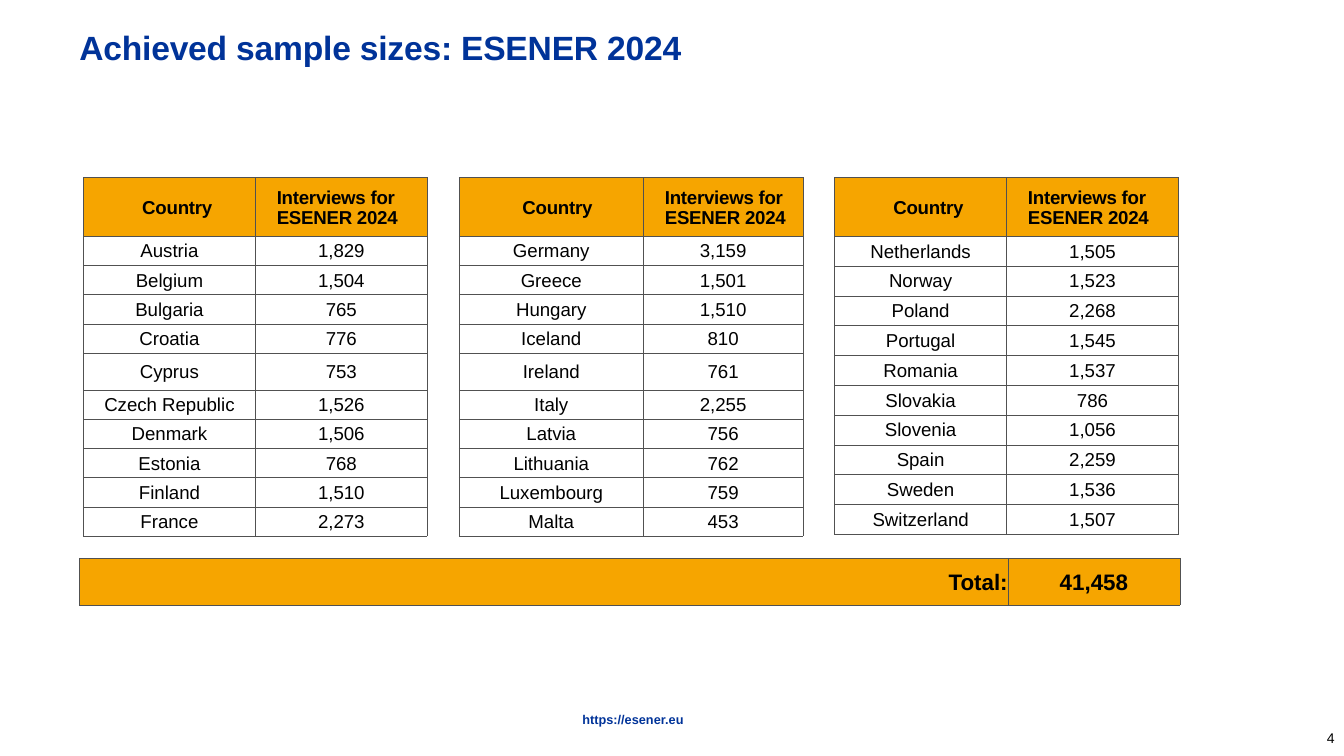
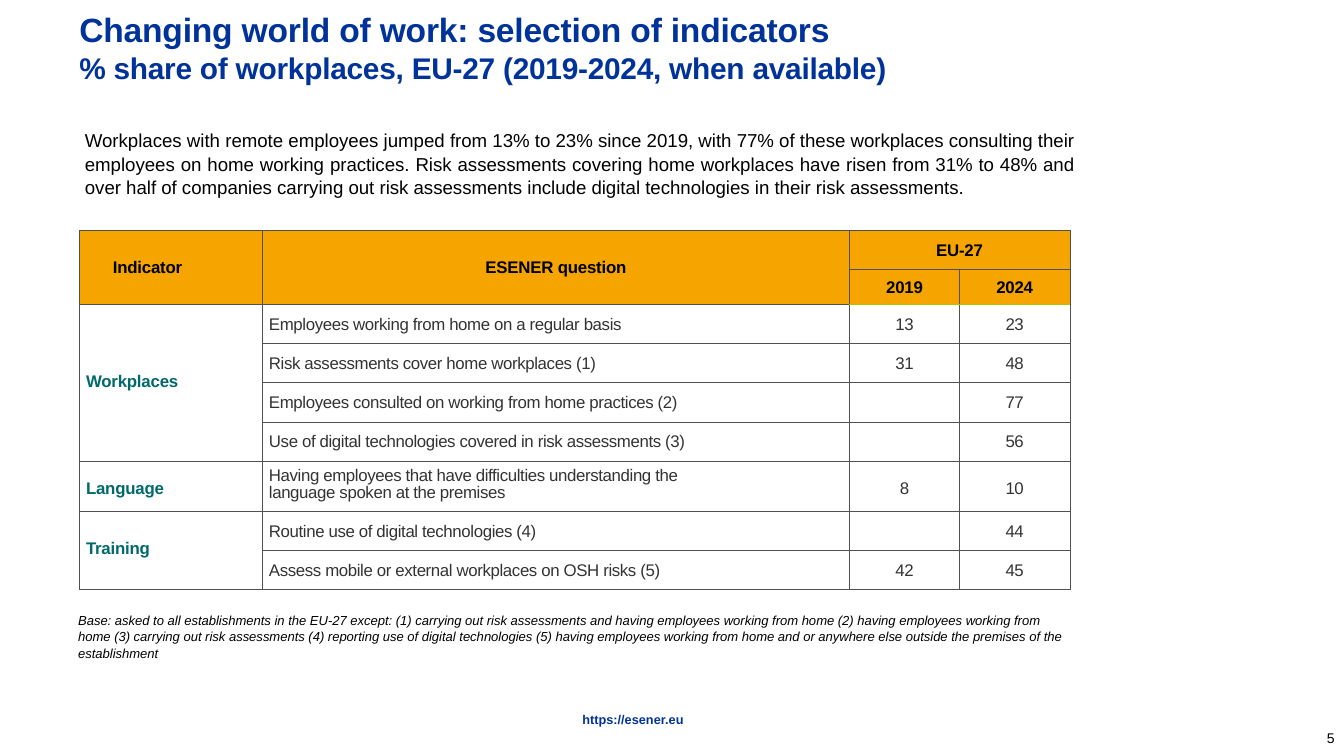
from lxml import etree
from pptx import Presentation
from pptx.dml.color import RGBColor
from pptx.enum.text import MSO_ANCHOR, MSO_AUTO_SIZE, PP_ALIGN
from pptx.oxml.ns import qn
from pptx.util import Pt

LEFT, CENTER, RIGHT, JUSTIFY = PP_ALIGN.LEFT, PP_ALIGN.CENTER, PP_ALIGN.RIGHT, PP_ALIGN.JUSTIFY
TOP, MIDDLE = MSO_ANCHOR.TOP, MSO_ANCHOR.MIDDLE
FIXED, GROW = MSO_AUTO_SIZE.NONE, MSO_AUTO_SIZE.SHAPE_TO_FIT_TEXT

BLUE = RGBColor(0x00, 0x33, 0x99)
ORANGE = RGBColor(0xF6, 0xA5, 0x00)
TEAL = RGBColor(0x00, 0x69, 0x6C)
BLACK = RGBColor(0x00, 0x00, 0x00)
CHARCOAL = RGBColor(0x33, 0x33, 0x33)
GRID = RGBColor(0x51, 0x51, 0x51)
LIME = RGBColor(0xAC, 0xC7, 0x00)
FONT = "Arial"

FOOTER = "https://esener.eu"
SAMPLE_TITLE = [("Achieved sample sizes: ESENER 2024", 18)]
SAMPLE_HEADERS = ("Country", "Interviews for\nESENER 2024")
SAMPLES = [
    {"columns": (92.1, 92.1), "indent": 31.5, "heights": {5: 19.8}, "row": 15.65, "rows": [
        ("Austria", "1,829"), ("Belgium", "1,504"), ("Bulgaria", "765"), ("Croatia", "776"),
        ("Cyprus", "753"), ("Czech Republic", "1,526"), ("Denmark", "1,506"),
        ("Estonia", "768"), ("Finland", "1,510"), ("France", "2,273")]},
    {"columns": (98.8, 85.4), "indent": 34, "heights": {5: 19.8}, "row": 15.65, "rows": [
        ("Germany", "3,159"), ("Greece", "1,501"), ("Hungary", "1,510"), ("Iceland", "810"),
        ("Ireland", "761"), ("Italy", "2,255"), ("Latvia", "756"), ("Lithuania", "762"),
        ("Luxembourg", "759"), ("Malta", "453")]},
    {"columns": (92.1, 92.1), "indent": 31.5, "heights": {}, "row": 15.98, "rows": [
        ("Netherlands", "1,505"), ("Norway", "1,523"), ("Poland", "2,268"),
        ("Portugal", "1,545"), ("Romania", "1,537"), ("Slovakia", "786"),
        ("Slovenia", "1,056"), ("Spain", "2,259"), ("Sweden", "1,536"),
        ("Switzerland", "1,507")]},
]
TOTAL = ("Total:", "41,458")

INDICATOR_TITLE = [
    ("Changing world of work: selection of indicators", 18),
    ("% share of workplaces, EU-27 (2019-2024, when available)", 16),
]
SUMMARY = (
    "Workplaces with remote employees jumped from 13% to 23% since 2019, with 77% of these "
    "workplaces consulting their employees on home working practices. Risk assessments covering "
    "home workplaces have risen from 31% to 48% and over half of companies carrying out risk "
    "assessments include digital technologies in their risk assessments."
)
INDICATOR_HEADERS = [
    ("Indicator", "ESENER question", "EU-27", ""),
    ("", "", "2019", "2024"),
]
INDICATORS = [
    ("Workplaces", "Employees working from home on a regular basis", "13", "23"),
    ("", "Risk assessments cover home workplaces (1)", "31", "48"),
    ("", "Employees consulted on working from home practices (2)", "", "77"),
    ("", "Use of digital technologies covered in risk assessments (3)", "", "56"),
    ("Language", "Having employees that have difficulties understanding the\n"
     "language spoken at the premises", "8", "10"),
    ("Training", "Routine use of digital technologies (4)", "", "44"),
    ("", "Assess mobile or external workplaces on OSH risks (5)", "42", "45"),
]
INDICATOR_MERGES = [((0, 0), (1, 0)), ((0, 1), (1, 1)), ((0, 2), (0, 3)),
                    ((2, 0), (5, 0)), ((7, 0), (8, 0))]
BASE_NOTE = (
    "Base: asked to all establishments in the EU-27 except: (1) carrying out risk assessments and "
    "having employees working from home (2) having employees working from home (3) carrying out "
    "risk assessments (4) reporting use of digital technologies (5) having employees working from "
    "home and or anywhere else outside the premises of the establishment"
)

TABLE_HEAD = {"size": 10, "bold": True, "spacing": -0.1}
TABLE_BODY = {"size": 10, "align": CENTER}
INDICATOR_HEAD = {"size": 9, "bold": True, "spacing": -0.1}
THEME = {"size": 9, "bold": True, "color": TEAL, "spacing": -0.1}
QUESTION = {"size": 9, "color": CHARCOAL, "spacing": -0.2}
SHARE = {**QUESTION, "align": CENTER}


def set_values(target, values):
    """Set each named attribute of the target."""
    for name, value in values.items():
        setattr(target, name, value)


def set_frame(frame, margins, anchor):
    """Set the left, top, right and bottom margins and the anchor."""
    sides = ("margin_left", "margin_top", "margin_right", "margin_bottom")
    set_values(frame, {side: Pt(margin) for side, margin in zip(sides, margins)})
    frame.vertical_anchor = anchor


def add_run(paragraph, text, size, color=BLACK, bold=False, italic=False, spacing=0):
    """Add one formatted run to the paragraph."""
    run = paragraph.add_run()
    run.text = text
    set_values(run.font, {"name": FONT, "size": Pt(size), "bold": bold, "italic": italic})
    run.font.color.rgb = color
    if spacing:
        run.font._element.set("spc", str(round(spacing * 100)))


def write(frame, text, align=LEFT, line=None, **style):
    """Write one paragraph for each line of text."""
    for index, part in enumerate(text.split("\n")):
        paragraph = frame.add_paragraph() if index else frame.paragraphs[0]
        set_values(paragraph, {"alignment": align, "line_spacing": line})
        if part:
            add_run(paragraph, part, **style)
        else:
            etree.SubElement(paragraph._p, qn("a:endParaRPr"), sz=str(style["size"] * 100))


def add_text(slide, box, text, margins=(0, 0, 0, 0), anchor=TOP, fit=FIXED, **style):
    """Add a wrapped text box."""
    frame = slide.shapes.add_textbox(*map(Pt, box)).text_frame
    set_values(frame, {"word_wrap": True, "auto_size": fit})
    set_frame(frame, margins, anchor)
    write(frame, text, **style)


def add_page(presentation, title, number):
    """Add a slide with its title, footer and number."""
    slide = presentation.slides.add_slide(presentation.slide_layouts[5])
    shape = slide.shapes.title
    box = {"left": 35.3, "top": 10.8, "width": 579.6, "height": 28.8}
    set_values(shape, {name: Pt(value) for name, value in box.items()})
    frame = shape.text_frame
    set_values(frame, {"word_wrap": True, "auto_size": FIXED})
    set_frame(frame, (7.2, 3.6, 7.2, 3.6), MIDDLE)
    paragraph = frame.paragraphs[0]
    paragraph.alignment = LEFT
    for index, (text, size) in enumerate(title):
        if index:
            paragraph.add_line_break()
        add_run(paragraph, text, size, BLUE, bold=True, spacing=-0.1)
    add_text(slide, (109.4, 382.3, 459.4, 6.5), FOOTER, align=CENTER, line=0.9,
             size=6.8, color=BLUE, bold=True)
    add_text(slide, (671.8, 384.5, 48.2, 21.6), str(number), (5, 2.9, 5, 2.9), MIDDLE,
             align=RIGHT, size=7.5)
    return slide


def add_grid(slide, left, top, columns, rows):
    """Add a plain table with the given column widths and row heights."""
    table = slide.shapes.add_table(len(rows), len(columns), Pt(left), Pt(top),
                                   Pt(sum(columns)), Pt(sum(rows))).table
    set_values(table, {"first_row": False, "horz_banding": False})
    for column, width in zip(table.columns, columns):
        column.width = Pt(width)
    for row, height in zip(table.rows, rows):
        row.height = Pt(height)
    return table


def fill_cell(cell, text, style, margins, fill=None, edges=None):
    """Write a cell and draw its borders and fill."""
    set_frame(cell, margins, MIDDLE)
    write(cell.text_frame, text, **style)
    properties = cell._tc.get_or_add_tcPr()
    for side in "LRTB":
        border = etree.SubElement(properties, qn(f"a:ln{side}"), w=str(Pt(0.25)))
        solid = etree.SubElement(border, qn("a:solidFill"))
        color = (edges or {}).get(side, GRID)
        etree.SubElement(solid, qn("a:srgbClr"), val=str(color))
    if fill is None:
        cell.fill.background()
    else:
        cell.fill.solid()
        cell.fill.fore_color.rgb = fill


def build_samples(presentation):
    """Build the slide of sample sizes by country."""
    slide = add_page(presentation, SAMPLE_TITLE, 4)
    for index, sample in enumerate(SAMPLES):
        heights = [31.6] + [sample["heights"].get(row, sample["row"])
                            for row in range(1, len(sample["rows"]) + 1)]
        table = add_grid(slide, 44.7 + 201.2 * index, 95, sample["columns"], heights)
        for column, indent in enumerate((sample["indent"], 11.5)):
            fill_cell(table.cell(0, column), SAMPLE_HEADERS[column], TABLE_HEAD,
                      (indent, 4.3, 0, 2.9), ORANGE)
        for row, values in enumerate(sample["rows"], 1):
            for column, text in enumerate(values):
                fill_cell(table.cell(row, column), text, TABLE_BODY, (0.7, 0.7, 0.7, 0))
    total = add_grid(slide, 42.6, 299, (497.3, 92.4), (25.2,))
    for column, (text, align) in enumerate(zip(TOTAL, (RIGHT, CENTER))):
        fill_cell(total.cell(0, column), text, {"size": 12, "bold": True, "align": align},
                  (0, 4.3, 0, 2.9), ORANGE)


def build_indicators(presentation):
    """Build the slide of indicators for 2019 and 2024."""
    slide = add_page(presentation, INDICATOR_TITLE, 5)
    add_text(slide, (44.6, 67.7, 530.6, 37.4), SUMMARY, (0.9, 0.7, 0, 0), fit=GROW,
             align=JUSTIFY, line=1.05, size=10)
    heights = [20.8, 18.9] + [26.9 if "\n" in row[1] else 21 for row in INDICATORS]
    table = add_grid(slide, 42.5, 123.4, (98, 314.6, 59, 59), heights)
    for start, end in INDICATOR_MERGES:
        table.cell(*start).merge(table.cell(*end))
    for row, values in enumerate(INDICATOR_HEADERS):
        for column, text in enumerate(values):
            style = {**INDICATOR_HEAD, "align": CENTER if column else LEFT}
            edges = {"B": LIME} if row and column > 1 else None
            fill_cell(table.cell(row, column), text, style,
                      (0 if column else 18, 3.6, 0, 2.9), ORANGE, edges)
    for row, values in enumerate(INDICATORS, 2):
        wrapped = "\n" in values[1]
        tall = 5.8 if wrapped else 3.6
        for column, text in enumerate(values):
            style, indent, top = (SHARE, 0, tall)
            if column == 0:
                style, indent, top = THEME, 3.6, 5.8 if wrapped else 1.5
            elif column == 1:
                style, indent, top = QUESTION, 3.6, 1.4 if wrapped else 3.6
                if wrapped:
                    style = {**QUESTION, "line": Pt(9.3)}
            edges = {"T": LIME} if row == 2 and column > 1 else None
            fill_cell(table.cell(row, column), text, style, (indent, top, 0, 2.9), edges=edges)
    add_text(slide, (41, 326.9, 535, 26.6), BASE_NOTE, (0.9, 0.7, 0, 0), fit=GROW,
             line=1.05, size=7, italic=True)


def main():
    """Build and save the presentation."""
    presentation = Presentation()
    set_values(presentation, {"slide_width": Pt(720), "slide_height": Pt(405)})
    build_samples(presentation)
    build_indicators(presentation)
    presentation.save("out.pptx")


if __name__ == "__main__":
    main()
